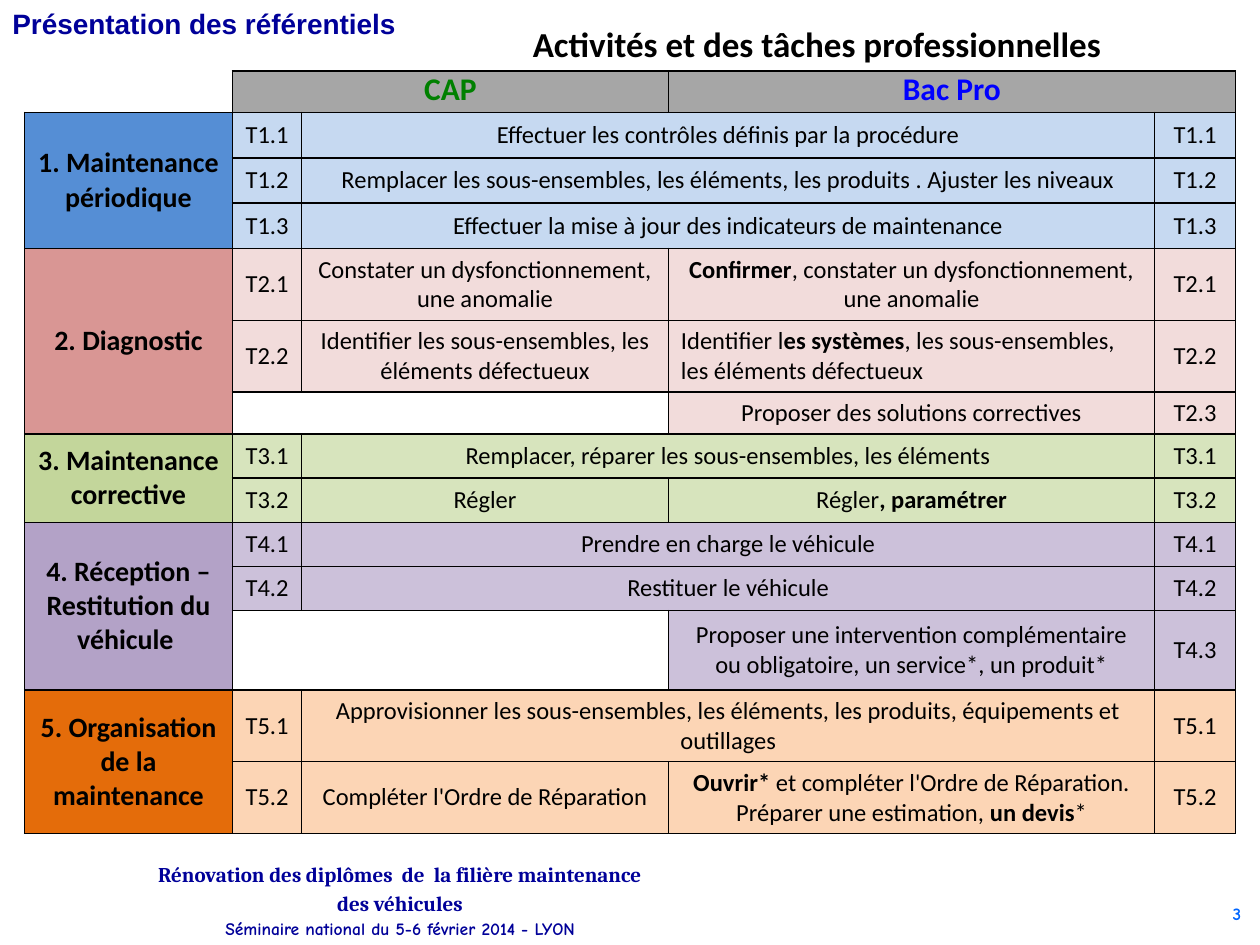
from dataclasses import dataclass
from typing import NamedTuple, Optional

from lxml import etree
from pptx import Presentation
from pptx.dml.color import RGBColor
from pptx.enum.text import MSO_ANCHOR, PP_ALIGN
from pptx.oxml.ns import qn
from pptx.util import Inches, Pt

LEFT, CENTER, RIGHT = PP_ALIGN.LEFT, PP_ALIGN.CENTER, PP_ALIGN.RIGHT
TOP, MIDDLE = MSO_ANCHOR.TOP, MSO_ANCHOR.MIDDLE

PAGE_WIDTH, PAGE_HEIGHT = Inches(10), Inches(7.5)
BLACK = RGBColor(0x00, 0x00, 0x00)
NAVY = RGBColor(0x00, 0x00, 0x99)
PAGE_BLUE = RGBColor(0x00, 0x66, 0xFF)
CAP_GREEN = RGBColor(0x00, 0x80, 0x00)
BAC_BLUE = RGBColor(0x00, 0x00, 0xFF)
GREY = RGBColor(0xA6, 0xA6, 0xA6)
BLUE, PALE_BLUE = RGBColor(0x55, 0x8E, 0xD5), RGBColor(0xC6, 0xD9, 0xF1)
ROSE, PALE_ROSE = RGBColor(0xD9, 0x96, 0x94), RGBColor(0xF2, 0xDC, 0xDB)
GREEN, PALE_GREEN = RGBColor(0xC3, 0xD6, 0x9B), RGBColor(0xD7, 0xE4, 0xBD)
PURPLE, PALE_PURPLE = RGBColor(0xB3, 0xA2, 0xC7), RGBColor(0xCC, 0xC1, 0xDA)
ORANGE, PALE_ORANGE = RGBColor(0xE4, 0x6C, 0x0A), RGBColor(0xFC, 0xD5, 0xB5)


class Style(NamedTuple):
    font: str
    size: float
    color: RGBColor = BLACK
    bold: bool = False
    align: PP_ALIGN = CENTER


class Area(NamedTuple):
    """Position and size in percent of the slide's width and height."""
    left: float
    top: float
    width: float
    height: float


@dataclass
class Task:
    """No bac text: shared by both diplomas. No cap text: Bac Pro only."""
    code: str
    height: float
    cap: str = ""
    bac: str = ""
    bac_align: PP_ALIGN = CENTER


@dataclass
class Activity:
    name: str
    color: RGBColor
    pale: RGBColor
    tasks: list[Task]


ACTIVITY_STYLE = Style("Calibri", 16, bold=True)
TASK_STYLE = Style("Calibri", 14)

# Column widths and row heights, in percent of the slide
COLUMNS = [16.5, 5.5, 29.1, 38.6, 6.4]
HEADER, SINGLE, SHORT, DOUBLE, TALL = 4.4, 4.8, 4.67, 7.6, 8.4
NAME_COL, CODE_COL, CAP_COL, BAC_COL, LAST_COL = range(5)

# Bold passages stand between bars
ACTIVITIES = [
    Activity("1. Maintenance périodique", BLUE, PALE_BLUE, [
        Task("T1.1", SINGLE, "Effectuer les contrôles définis par la procédure"),
        Task("T1.2", SINGLE, "Remplacer les sous-ensembles, les éléments, "
             "les produits . Ajuster les niveaux"),
        Task("T1.3", SINGLE, "Effectuer la mise à jour des indicateurs de maintenance"),
    ]),
    Activity("2. Diagnostic", ROSE, PALE_ROSE, [
        Task("T2.1", DOUBLE, "Constater un dysfonctionnement, une anomalie",
             "|Confirmer|, constater un dysfonctionnement, une anomalie"),
        Task("T2.2", DOUBLE, "Identifier les sous-ensembles, les éléments défectueux",
             "Identifier l|es systèmes|, les sous-ensembles, les éléments défectueux",
             LEFT),
        Task("T2.3", HEADER, bac="Proposer des solutions correctives"),
    ]),
    Activity("3. Maintenance corrective", GREEN, PALE_GREEN, [
        Task("T3.1", SHORT, "Remplacer, réparer les sous-ensembles, les éléments"),
        Task("T3.2", SHORT, "Régler", "Régler|, paramétrer|"),
    ]),
    Activity("4. Réception –Restitution du véhicule ", PURPLE, PALE_PURPLE, [
        Task("T4.1", SHORT, "Prendre en charge le véhicule"),
        Task("T4.2", SHORT, "Restituer le véhicule"),
        Task("T4.3", TALL, bac="Proposer une intervention complémentaire "
             "ou obligatoire, un service*, un produit*"),
    ]),
    Activity("5. Organisation de la maintenance", ORANGE, PALE_ORANGE, [
        Task("T5.1", DOUBLE, "Approvisionner les sous-ensembles, les éléments, "
             "les produits, équipements et outillages"),
        Task("T5.2", DOUBLE, "Compléter l'Ordre de Réparation",
             "|Ouvrir*| et compléter l'Ordre de Réparation. "
             "Préparer une estimation, |un devis|*"),
    ]),
]


def across(percent: float) -> int:
    return round(PAGE_WIDTH * percent / 100)


def down(percent: float) -> int:
    return round(PAGE_HEIGHT * percent / 100)


def write(para, text: str, style: Style) -> None:
    para.alignment = style.align
    for number, piece in enumerate(text.split("|")):
        if not piece:
            continue
        span = para.add_run()
        span.text = piece
        span.font.name, span.font.size = style.font, Pt(style.size)
        span.font.color.rgb = style.color
        span.font.bold = style.bold or number % 2 == 1


def add_text(page, area: Area, lines: list[tuple[str, Style]], anchor=TOP,
             wrap: bool = True, spacing: Optional[float] = None) -> None:
    box = page.shapes.add_textbox(across(area.left), down(area.top),
                                  across(area.width), down(area.height))
    frame = box.text_frame
    frame.word_wrap, frame.vertical_anchor = wrap, anchor
    for number, (text, style) in enumerate(lines):
        para = frame.add_paragraph() if number else frame.paragraphs[0]
        para.line_spacing = spacing
        write(para, text, style)


def add_borders(cell, sides: str) -> None:
    for side in sides:
        line = etree.SubElement(cell._tc.get_or_add_tcPr(), qn(f"a:ln{side}"), w=str(Pt(1)))
        fill = etree.SubElement(line, qn("a:solidFill"))
        etree.SubElement(fill, qn("a:srgbClr"), val=str(BLACK))


def fill_cell(cell, text: str, style: Style, color: RGBColor,
              anchor=MIDDLE, margin: float = 0.05) -> None:
    cell.fill.solid()
    cell.fill.fore_color.rgb = color
    cell.vertical_anchor = anchor
    cell.margin_left = cell.margin_right = Inches(0.1)
    cell.margin_top = cell.margin_bottom = Inches(margin)
    write(cell.text_frame.paragraphs[0], text, style)


def add_task(table, row: int, task: Task, color: RGBColor) -> None:
    cap, bac = table.cell(row, CAP_COL), table.cell(row, BAC_COL)
    fill_cell(table.cell(row, LAST_COL), task.code, TASK_STYLE, color)
    if task.cap:
        fill_cell(table.cell(row, CODE_COL), task.code, TASK_STYLE, color)
        fill_cell(cap, task.cap, TASK_STYLE, color)
    else:
        table.cell(row, CODE_COL).merge(cap)
    if task.bac:
        fill_cell(bac, task.bac, TASK_STYLE._replace(align=task.bac_align), color)
    else:
        cap.merge(bac)


def add_activity_table(page) -> None:
    heights = [HEADER] + [task.height for group in ACTIVITIES for task in group.tasks]
    table = page.shapes.add_table(
        len(heights), len(COLUMNS), across(1.95), down(7.5),
        across(sum(COLUMNS)), down(sum(heights))).table
    table.first_row = table.horz_banding = False
    for column, width in zip(table.columns, COLUMNS):
        column.width = across(width)
    for row, height in zip(table.rows, heights):
        row.height = down(height)
    for number, cell in enumerate(table.iter_cells()):
        add_borders(cell, "LRTB" if number else "RB")
        cell.fill.background()
        cell.margin_top = cell.margin_bottom = 0

    # Diploma headings
    for column, name, color in ((CODE_COL, "CAP", CAP_GREEN), (BAC_COL, "Bac Pro", BAC_BLUE)):
        heading = table.cell(0, column)
        heading.merge(table.cell(0, column + 1))
        fill_cell(heading, name, Style("Calibri", 18, color, True), GREY, TOP, 0)

    # Activities and their tasks
    row = 1
    for group in ACTIVITIES:
        name_cell = table.cell(row, NAME_COL)
        name_cell.merge(table.cell(row + len(group.tasks) - 1, NAME_COL))
        fill_cell(name_cell, group.name, ACTIVITY_STYLE, group.color)
        for task in group.tasks:
            add_task(table, row, task, group.pale)
            row += 1


def main() -> None:
    deck = Presentation()
    deck.slide_width, deck.slide_height = PAGE_WIDTH, PAGE_HEIGHT
    page = deck.slides.add_slide(deck.slide_layouts[6])

    # Page number and footer
    add_text(page, Area(93.5, 94.93, 6, 4.27),
             [("3", Style("Comic Neue", 10, PAGE_BLUE, True, RIGHT))])
    add_text(page, Area(11.4, 91.33, 40.7, 7.47), [
        ("Rénovation des diplômes  de  la filière maintenance des véhicules",
         Style("Cambria", 12, NAVY, True)),
        ("Séminaire national du 5-6 février 2014 - LYON",
         Style("Comic Neue", 10, NAVY, True)),
    ], MIDDLE, spacing=1.15)

    # Titles
    add_text(page, Area(0, 0, 32.7, 4.93),
             [("Présentation des référentiels", Style("Arial", 16, NAVY, True, LEFT))])
    add_text(page, Area(41.3, 1.73, 48.2, 5.87),
             [("Activités et des tâches professionnelles",
               Style("Calibri", 20, BLACK, True, LEFT))], wrap=False)

    add_activity_table(page)
    deck.save("out.pptx")


if __name__ == "__main__":
    main()
